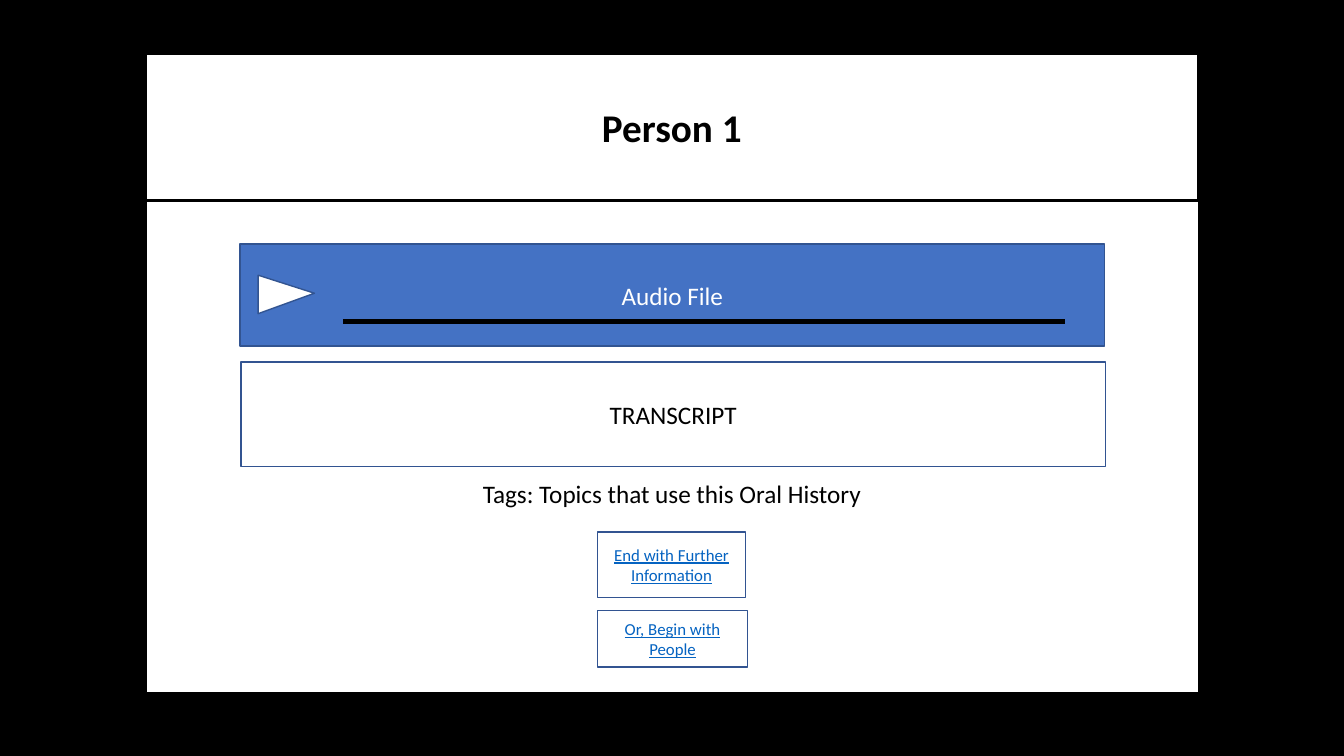
from lxml import etree
from pptx import Presentation
from pptx.dml.color import RGBColor
from pptx.enum.shapes import MSO_CONNECTOR, MSO_SHAPE
from pptx.enum.text import MSO_ANCHOR, MSO_AUTO_SIZE, PP_ALIGN
from pptx.oxml.ns import qn
from pptx.util import Cm, Pt

RECT = MSO_SHAPE.RECTANGLE
PLAY = MSO_SHAPE.ISOSCELES_TRIANGLE
LINE = MSO_CONNECTOR.STRAIGHT
MIDDLE = MSO_ANCHOR.MIDDLE
CENTER = PP_ALIGN.CENTER
FIXED = MSO_AUTO_SIZE.NONE

BLACK, WHITE, BLUE, EDGE, LINK = "000000", "FFFFFF", "4472C4", "325491", "0563C1"
HEAD = {"size": Pt(28), "bold": True}
BODY = {"size": Pt(18)}
URL = {"size": Pt(12), "underline": True}


def paint(target, color):
    """Give a font, line or solid fill its colour from a hex string."""
    target.rgb = RGBColor.from_string(color)


def coat(shape, fill, edge, width):
    """Set the fill and outline of a shape."""
    shape.fill.solid()
    paint(shape.fill.fore_color, fill)
    paint(shape.line.color, edge)
    shape.line.width = Pt(width)


def write(shape, text, style, color):
    """Put one centred line of formatted text in a shape."""
    frame = shape.text_frame
    frame.text = text
    for key, value in {"word_wrap": True, "auto_size": FIXED,
                       "vertical_anchor": MIDDLE}.items():
        setattr(frame, key, value)
    para = frame.paragraphs[0]
    para.alignment = CENTER
    font = para.runs[0].font
    for key, value in {"name": "Calibri", **style}.items():
        setattr(font, key, value)
    paint(font.color, color)


def panel(slide, box, fill=WHITE, edge=EDGE, kind=RECT):
    """Draw an outlined shape in a box given in centimetres."""
    shape = slide.shapes.add_shape(kind, *map(Cm, box))
    shape.shadow.inherit = False
    coat(shape, fill, edge, 1)
    return shape


def header(slide, box, text):
    """Place the title in front of the page panel."""
    title = slide.shapes.title
    title.element.getparent().append(title.element)
    for key, value in zip(("left", "top", "width", "height"), box):
        setattr(title, key, Cm(value))
    coat(title, WHITE, BLACK, 2.25)
    write(title, text, HEAD, BLACK)


def button(slide, box, text):
    """Draw a box with link-styled text."""
    write(panel(slide, box), text, URL, LINK)


def player(slide, box, text):
    """Draw the audio bar with its play mark and track."""
    x, y, w, h = box
    write(panel(slide, box, BLUE), text, BODY, WHITE)
    mark = panel(slide, (x + 0.68, y + 0.56, 0.97, 1.42), kind=PLAY)
    mark.rotation = 90
    mark.adjustments[0] = 0.47
    level = Cm(y + h - 0.62)
    track = slide.shapes.add_connector(LINE, Cm(x + 2.59), level, Cm(x + w - 0.99), level)
    paint(track.line.color, BLACK)
    track.line.width = Pt(3)
    etree.SubElement(track.element.spPr, qn("a:effectLst"))


def script(slide, box, text):
    """Draw the transcript box."""
    write(panel(slide, box), text, BODY, BLACK)


def tags(slide, box, text):
    """Place the line of tags."""
    write(slide.shapes.add_textbox(*map(Cm, box)), text, BODY, BLACK)


def main():
    """Build and save the slide."""
    deck = Presentation()
    deck.slide_width, deck.slide_height = Cm(33.87), Cm(19.05)
    slide = deck.slides.add_slide(deck.slide_layouts[5])
    back = slide.background.fill
    back.solid()
    paint(back.fore_color, BLACK)
    panel(slide, (3.68, 1.35, 26.54, 16.1), edge=BLACK)
    header(slide, (3.66, 1.35, 26.54, 3.71), "Person 1")
    button(slide, (15.06, 13.41, 3.73, 1.65), "End with Further Information")
    button(slide, (15.06, 15.39, 3.78, 1.42), "Or, Begin with People")
    player(slide, (6.05, 6.15, 21.79, 2.57), "Audio File")
    script(slide, (6.07, 9.12, 21.79, 2.64), "TRANSCRIPT")
    tags(slide, (6.05, 12.07, 21.77, 0.74), "Tags: Topics that use this Oral History")
    deck.save("out.pptx")


if __name__ == "__main__":
    main()
